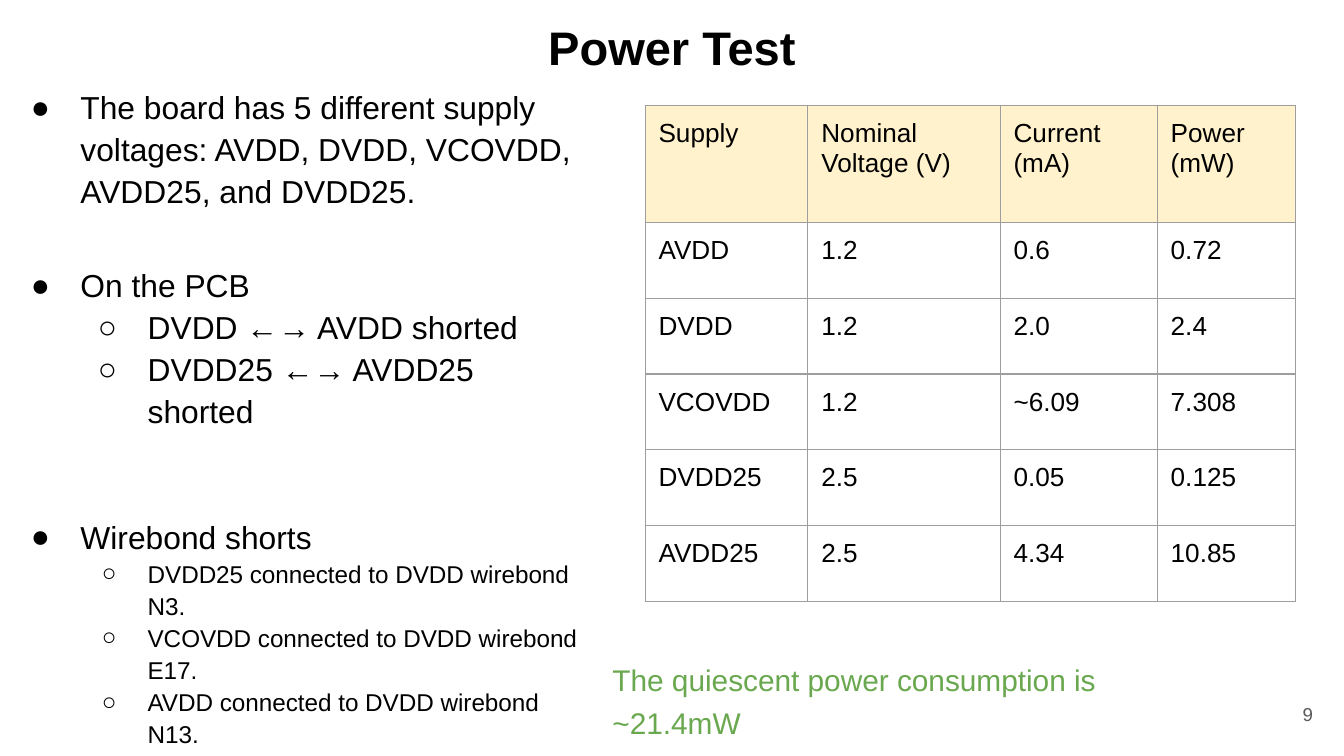
from dataclasses import dataclass

from lxml.etree import SubElement
from pptx import Presentation
from pptx.dml.color import RGBColor
from pptx.enum.text import MSO_ANCHOR, PP_ALIGN
from pptx.oxml.ns import qn
from pptx.util import Pt


@dataclass(frozen=True)
class Theme:
    font: str = "Arial"
    ink: str = "000000"
    accent: str = "6AA84F"
    muted: str = "595959"
    header: str = "FFF2CC"
    grid: str = "9E9E9E"
    title: float = 25.2
    body: float = 17
    detail: float = 13
    cell: float = 14
    result: float = 16
    number: float = 10
    inset: float = 7.2


THEME = Theme()

BULLETS = [
    (0, THEME.body, 0, "The board has 5 different supply voltages: "
     "AVDD, DVDD, VCOVDD, AVDD25, and DVDD25."),
    (0, THEME.body, 28, "On the PCB"),
    (1, THEME.body, 0, "DVDD ←→ AVDD shorted"),
    (1, THEME.body, 0, "DVDD25 ←→ AVDD25 shorted"),
    (0, THEME.body, 45, "Wirebond shorts"),
    (1, THEME.detail, 0, "DVDD25 connected to DVDD wirebond N3."),
    (1, THEME.detail, 0, "VCOVDD connected to DVDD wirebond E17."),
    (1, THEME.detail, 0, "AVDD connected to DVDD wirebond N13."),
]

SUPPLIES = [
    ("Supply", "Nominal Voltage (V)", "Current (mA)", "Power (mW)"),
    ("AVDD", "1.2", "0.6", "0.72"),
    ("DVDD", "1.2", "2.0", "2.4"),
    ("VCOVDD", "1.2", "~6.09", "7.308"),
    ("DVDD25", "2.5", "0.05", "0.125"),
    ("AVDD25", "2.5", "4.34", "10.85"),
]
COLUMN_WIDTHS = (87.2, 103, 84.2, 74.2)
HEADER_HEIGHT, ROW_HEIGHT = 62.6, 40.6


def add_run(paragraph, wording, size, color=THEME.ink, bold=False):
    run = paragraph.add_run()
    run.text = wording
    run.font.name = THEME.font
    run.font.size = Pt(size)
    run.font.bold = bold
    run.font.color.rgb = RGBColor.from_string(color)


def add_frame(slide, left, top, width, height, anchor=MSO_ANCHOR.TOP):
    box = slide.shapes.add_textbox(Pt(left), Pt(top), Pt(width), Pt(height))
    frame = box.text_frame
    frame.word_wrap = True
    frame.vertical_anchor = anchor
    frame.margin_left = frame.margin_right = Pt(THEME.inset)
    frame.margin_top = frame.margin_bottom = Pt(THEME.inset)
    return frame


def add_line(slide, bounds, wording, size, color=THEME.ink, bold=False,
             align=PP_ALIGN.LEFT, spacing=1.0, anchor=MSO_ANCHOR.TOP):
    line = add_frame(slide, *bounds, anchor).paragraphs[0]
    line.alignment = align
    line.line_spacing = spacing
    add_run(line, wording, size, color, bold)


def set_bullet(paragraph, level, size):
    hanging = 26.6 if size == THEME.body else 24.5
    properties = paragraph._p.get_or_add_pPr()
    properties.set("marL", str(Pt(36 * (level + 1))))
    properties.set("indent", str(-Pt(hanging)))
    color = SubElement(properties, qn("a:buClr"))
    SubElement(color, qn("a:srgbClr"), val=THEME.ink)
    SubElement(properties, qn("a:buFont"), typeface=THEME.font)
    SubElement(properties, qn("a:buChar"), char="●○"[level])


def add_bullets(slide, bounds, bullets):
    frame = add_frame(slide, *bounds)
    for index, (level, size, gap, wording) in enumerate(bullets):
        bullet = frame.add_paragraph() if index else frame.paragraphs[0]
        bullet.level = level
        bullet.line_spacing = 1.1
        bullet.space_before = Pt(gap)
        set_bullet(bullet, level, size)
        add_run(bullet, wording, size)


def set_borders(cell):
    properties = cell._tc.get_or_add_tcPr()
    for side in ("lnL", "lnR", "lnT", "lnB"):
        border = SubElement(properties, qn(f"a:{side}"), w=str(Pt(0.75)))
        fill = SubElement(border, qn("a:solidFill"))
        SubElement(fill, qn("a:srgbClr"), val=THEME.grid)


def fill_cell(cell, wording, is_header):
    cell.margin_left = cell.margin_right = Pt(THEME.inset)
    cell.margin_top = cell.margin_bottom = Pt(THEME.inset)
    set_borders(cell)
    if is_header:
        cell.fill.solid()
        cell.fill.fore_color.rgb = RGBColor.from_string(THEME.header)
    else:
        cell.fill.background()
    add_run(cell.text_frame.paragraphs[0], wording, THEME.cell)


def add_supply_table(slide, left, top):
    heights = [HEADER_HEIGHT] + [ROW_HEIGHT] * (len(SUPPLIES) - 1)
    table = slide.shapes.add_table(
        len(heights), len(COLUMN_WIDTHS), Pt(left), Pt(top),
        Pt(sum(COLUMN_WIDTHS)), Pt(sum(heights))).table
    table.first_row = table.horz_banding = False
    for column, width in zip(table.columns, COLUMN_WIDTHS):
        column.width = Pt(width)
    for index, (row, height) in enumerate(zip(table.rows, heights)):
        row.height = Pt(height)
        for cell, wording in zip(row.cells, SUPPLIES[index]):
            fill_cell(cell, wording, is_header=index == 0)


def main():
    deck = Presentation()
    deck.slide_width, deck.slide_height = Pt(720), Pt(405)
    slide = deck.slides.add_slide(deck.slide_layouts[6])
    add_line(slide, (0, 2.5, 720, 44), "Power Test", THEME.title,
             bold=True, align=PP_ALIGN.CENTER)
    add_bullets(slide, (0, 38, 317, 366.5), BULLETS)
    add_supply_table(slide, 345.6, 56.6)
    add_line(slide, (321, 343.5, 342, 44),
             "The quiescent power consumption is ~21.4mW",
             THEME.result, THEME.accent, spacing=1.2)
    add_line(slide, (667.2, 367.2, 43.2, 31), "9", THEME.number, THEME.muted,
             align=PP_ALIGN.RIGHT, anchor=MSO_ANCHOR.MIDDLE)
    deck.save("out.pptx")


if __name__ == "__main__":
    main()
